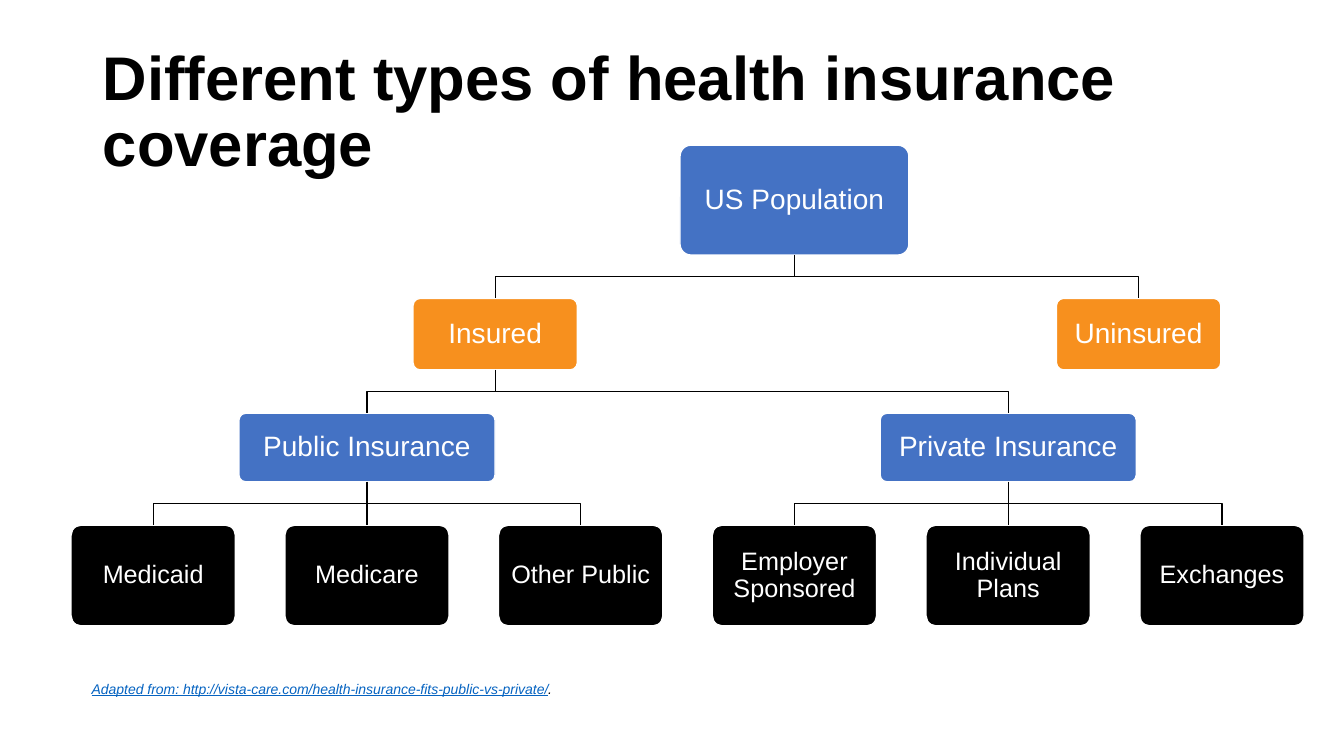
from dataclasses import dataclass

from lxml.etree import SubElement
from pptx import Presentation
from pptx.dml.color import RGBColor
from pptx.enum.shapes import MSO_CONNECTOR as Connector, MSO_SHAPE as Shape
from pptx.enum.text import MSO_ANCHOR as Anchor, MSO_AUTO_SIZE as AutoSize, PP_ALIGN as Align
from pptx.oxml.ns import qn
from pptx.util import Inches, Pt


@dataclass(frozen=True)
class Theme:
    font: str = "Arial"
    blue: str = "4472C4"
    orange: str = "F7901E"
    black: str = "000000"
    white: str = "FFFFFF"
    link: str = "0563C1"
    title_size: int = 44
    branch_size: int = 20
    leaf_size: int = 18
    source_size: int = 10
    line_width: int = 1


@dataclass(frozen=True)
class Level:
    top: float
    height: float
    width: float
    fill: str
    size: int
    inset: float


THEME = Theme()

# Grid: six equal columns of leaves; every box is centred on a column position
FIRST_CENTRE, COLUMN_PITCH = 1.52, 2.12
LEVELS = [
    Level(1.44, 1.09, 2.27, THEME.blue, THEME.branch_size, 0.08),
    Level(2.96, 0.71, 1.63, THEME.orange, THEME.branch_size, 0.08),
    Level(4.10, 0.68, 2.54, THEME.blue, THEME.branch_size, 0.08),
    Level(5.21, 1.00, 1.63, THEME.black, THEME.leaf_size, 0.07),
]

# Tree: label, column position, children
TREE = ("US Population", 3, [
    ("Insured", 1.6, [
        ("Public Insurance", 1, [
            ("Medicaid", 0, []),
            ("Medicare", 1, []),
            ("Other Public", 2, []),
        ]),
        ("Private Insurance", 4, [
            ("Employer Sponsored", 3, []),
            ("Individual Plans", 4, []),
            ("Exchanges", 5, []),
        ]),
    ]),
    ("Uninsured", 4.61, []),
])


def rgb(colour):
    return RGBColor.from_string(colour)


def centre_of(column):
    return FIRST_CENTRE + column * COLUMN_PITCH


def add_text(paragraph, text, *, size, colour, bold=False, italic=False, underline=False):
    run = paragraph.add_run()
    run.text = text
    font = run.font
    font.name, font.size, font.color.rgb = THEME.font, Pt(size), rgb(colour)
    font.bold, font.italic, font.underline = bold, italic, underline


def format_line(line, colour):
    line.color.rgb = rgb(colour)
    line.width = Pt(THEME.line_width)


def add_box(slide, label, column, level):
    shape = slide.shapes.add_shape(
        Shape.ROUNDED_RECTANGLE, Inches(centre_of(column) - level.width / 2),
        Inches(level.top), Inches(level.width), Inches(level.height))
    shape.shadow.inherit = False
    shape.adjustments[0] = 0.1
    shape.fill.solid()
    shape.fill.fore_color.rgb = rgb(level.fill)
    format_line(shape.line, THEME.white)
    frame = shape.text_frame
    frame.word_wrap = True
    frame.vertical_anchor = Anchor.MIDDLE
    frame.margin_left = frame.margin_right = Inches(level.inset)
    frame.margin_top = frame.margin_bottom = Inches(level.inset)
    paragraph = frame.paragraphs[0]
    paragraph.alignment = Align.CENTER
    paragraph.line_spacing = 0.9
    add_text(paragraph, label, size=level.size, colour=THEME.white)
    return shape


def add_straight_link(slide, parent, child):
    link = slide.shapes.add_connector(Connector.STRAIGHT, 0, 0, 0, 0)
    link.begin_connect(parent, 2)
    link.end_connect(child, 0)
    format_line(link.line, THEME.black)
    SubElement(link.element.spPr, qn("a:effectLst"))


def add_elbow_link(slide, parent, child):
    start_x, start_y = parent.left + parent.width // 2, parent.top + parent.height
    end_x, end_y = child.left + child.width // 2, child.top
    middle_y = (start_y + end_y) // 2
    builder = slide.shapes.build_freeform(start_x, start_y)
    builder.add_line_segments(
        [(start_x, middle_y), (end_x, middle_y), (end_x, end_y)], close=False)
    link = builder.convert_to_shape()
    link.shadow.inherit = False
    link.fill.background()
    format_line(link.line, THEME.black)


def add_branch(slide, node, depth=0):
    label, column, children = node
    box = add_box(slide, label, column, LEVELS[depth])
    for child in children:
        child_box = add_branch(slide, child, depth + 1)
        add_link = add_straight_link if child[1] == column else add_elbow_link
        add_link(slide, box, child_box)
    return box


def add_title(slide, text):
    title = slide.shapes.title
    title.left, title.top = Inches(0.92), Inches(0.4)
    title.width, title.height = Inches(11.5), Inches(1.45)
    frame = title.text_frame
    frame.word_wrap = True
    frame.auto_size = AutoSize.NONE
    frame.vertical_anchor = Anchor.MIDDLE
    paragraph = frame.paragraphs[0]
    paragraph.alignment = Align.LEFT
    paragraph.line_spacing = 0.9
    add_text(paragraph, text, size=THEME.title_size, colour=THEME.black, bold=True)


def add_source(slide, text):
    box = slide.shapes.add_textbox(Inches(0.81), Inches(6.7), Inches(8.59), Inches(0.4))
    box.text_frame.word_wrap = True
    paragraph = box.text_frame.paragraphs[0]
    add_text(paragraph, text, size=THEME.source_size, colour=THEME.link,
             italic=True, underline=True)
    add_text(paragraph, ".", size=THEME.source_size, colour=THEME.black, italic=True)


def main():
    presentation = Presentation()
    presentation.slide_width, presentation.slide_height = Inches(13.33), Inches(7.5)
    title_only = presentation.slide_layouts.get_by_name("Title Only")
    slide = presentation.slides.add_slide(title_only)

    # Heading, tree of coverage types, and source line
    add_title(slide, "Different types of health insurance coverage")
    add_branch(slide, TREE)
    add_source(slide, "Adapted from: http://vista-care.com/health-insurance-fits-public-vs-private/")

    presentation.save("out.pptx")


if __name__ == "__main__":
    main()
